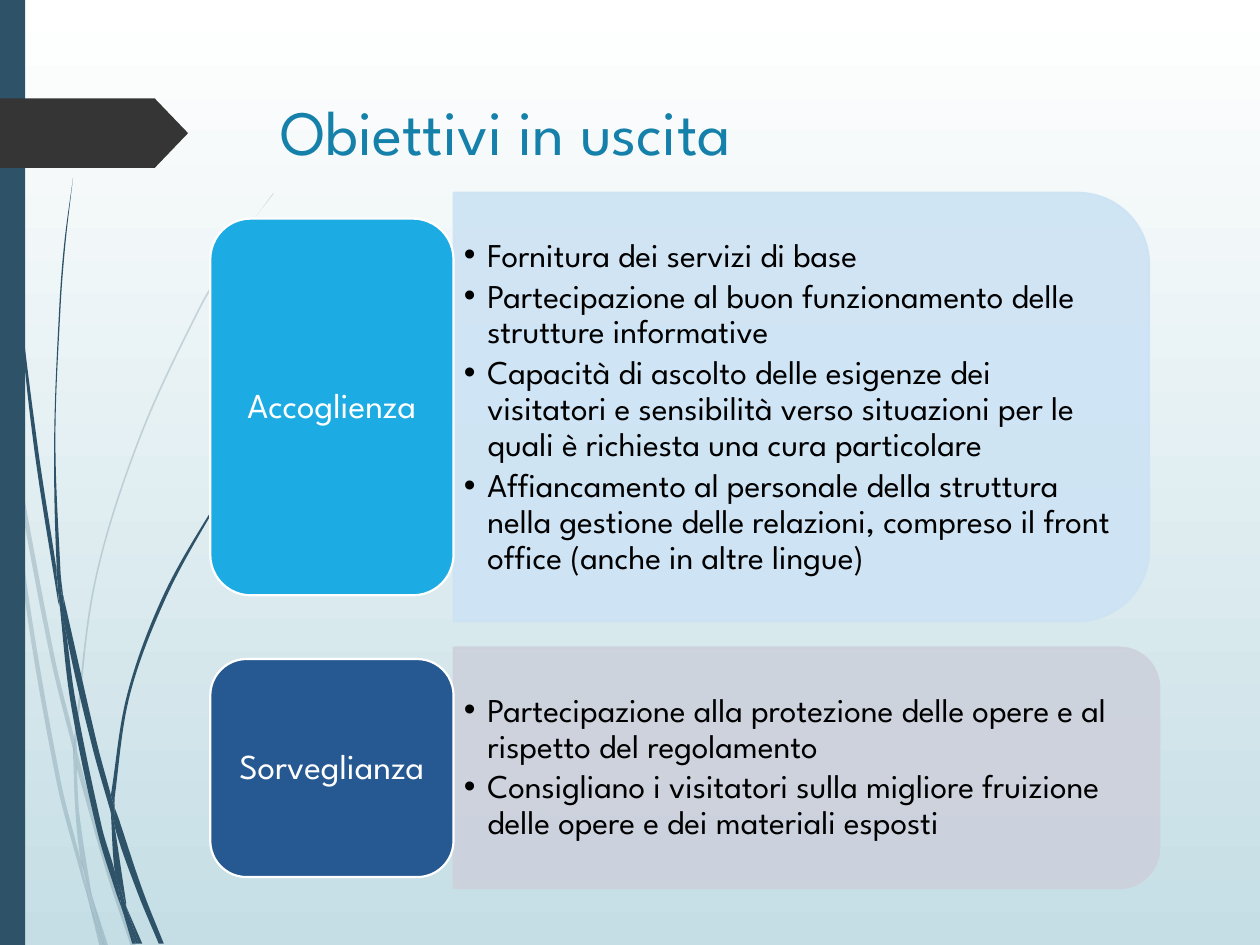
import math

import pptx
import pptx.util
import pptx.dml.color
import pptx.enum.shapes
import pptx.enum.text
import pptx.oxml
import pptx.oxml.ns

Pt = pptx.util.Pt
KIND = pptx.enum.shapes.MSO_SHAPE
ALIGN = pptx.enum.text.PP_ALIGN
ANCHOR = pptx.enum.text.MSO_ANCHOR
qn = pptx.oxml.ns.qn

FONT = "League Spartan"
HEX = {
    "white": "FFFFFF", "mist": "C5DEE5", "stem": "2E5369", "tag": "353535",
    "title": "1581AA", "text": "000000", "sky": "1CACE3", "navy": "265991",
    "pale": "CDE3F4", "grey": "CDD1DC",
}
TITLE = "Obiettivi in uscita"

# Each row: label, its colour, panel colour, tops and heights, panel width, items
ROWS = [
    {"label": "Accoglienza", "fill": "sky", "panel": "pale",
     "top": 124.9, "high": 215.3, "back": (110.2, 244.8), "wide": 397.4,
     "body": (122.4, 221, 385.2),
     "items": [
         "Fornitura dei servizi di base",
         "Partecipazione al buon funzionamento delle strutture informative",
         "Capacità di ascolto delle esigenze dei visitatori e sensibilità verso "
         "situazioni per le quali è richiesta una cura particolare",
         "Affiancamento al personale della struttura nella gestione delle "
         "relazioni, compreso il front office (anche in altre lingue)"]},
    {"label": "Sorveglianza", "fill": "navy", "panel": "grey",
     "top": 376.6, "high": 124.6, "back": (370, 137.5), "wide": 403.2,
     "body": (376.8, 123.8, 396.7),
     "items": [
         "Partecipazione alla protezione delle opere e al rispetto del regolamento",
         "Consigliano i visitatori sulla migliore fruizione delle opere e dei "
         "materiali esposti"]},
]
LEFT, SPLIT, BOX = 120.2, 259.2, 139

# Grass blades: the two edges of each piece, on a grid of 0.72 points
GRID = 0.72
FAINT = [
    ([(8, 350), (6, 322), (0, 282)], [(0, 299), (7, 344)]),
    ([(12, 376), (40, 522), (59, 599)], [(59, 586), (43, 520), (10, 345)]),
    ([(61, 610), (85, 694), (104, 751)],
     [(108, 751), (88, 692), (64, 607), (61, 596)]),
    ([(73, 711), (83, 751)], [(86, 751)]),
    ([(8, 350), (19, 470), (45, 621), (64, 693), (70, 714)],
     [(69, 707), (64, 683), (48, 619), (22, 469), (12, 376)]),
    ([(58, 599), (60, 646), (64, 683), (67, 692), (73, 711)],
     [(72, 706), (63, 646), (61, 610), (61, 608)]),
    ([(61, 596), (61, 584), (76, 462), (111, 349), (159, 245), (187, 198),
      (201, 175), (217, 154)],
     [(217, 153), (201, 175), (186, 197), (158, 244), (110, 348), (75, 461),
      (59, 584), (59, 586)]),
    ([(70, 714), (79, 751)], [(82, 751)]),
    ([(58, 599), (61, 608), (61, 610)], [(61, 596), (59, 586)]),
    ([(65, 683), (69, 707), (70, 714), (82, 751)],
     [(83, 751), (73, 711), (67, 692)]),
]
DARK = [
    ([(2, 0), (3, 48), (5, 110), (14, 233), (27, 355), (46, 477), (47, 481)],
     [(45, 457), (45, 453), (30, 355), (15, 232), (6, 109), (4, 48), (3, 0)]),
    ([(50, 472), (53, 505), (73, 592), (88, 645)],
     [(88, 633), (88, 631), (77, 590), (50, 472)]),
    ([(91, 641), (91, 656), (109, 708), (126, 749)],
     [(130, 749), (113, 706), (94, 649)]),
    ([(47, 477), (56, 557), (77, 659), (92, 708), (97, 722)],
     [(96, 717), (91, 691), (81, 657), (60, 556), (53, 505)]),
    ([(50, 472), (48, 453), (44, 349), (48, 245), (52, 193), (58, 141)],
     [(58, 141), (51, 193), (47, 245), (43, 349), (45, 449), (49, 472)]),
    ([(100, 719), (110, 749)], [(113, 749)]),
    ([(45, 449), (45, 453), (47, 477), (53, 505)], [(50, 472), (49, 472)]),
    ([(91, 641), (91, 633), (103, 552), (131, 476), (169, 406), (191, 374),
      (203, 359), (216, 344)],
     [(215, 344), (203, 358), (191, 373), (168, 405), (129, 474), (101, 551),
      (88, 631)]),
    ([(97, 722), (105, 749)], [(108, 749)]),
    ([(88, 645), (91, 691), (96, 706), (100, 719)],
     [(100, 716), (91, 656), (90, 651)]),
    ([(88, 631), (88, 645), (90, 651), (91, 656)], [(91, 641)]),
    ([(91, 691), (96, 717), (97, 722), (108, 749)],
     [(110, 749), (100, 719), (96, 706)]),
]


def rgb(name):
    return pptx.dml.color.RGBColor.from_string(HEX[name])


def node(tag, **attrs):
    part = pptx.oxml.parse_xml(
        f'<a:{tag} xmlns:a="http://schemas.openxmlformats.org/drawingml/2006/main"/>')
    for key, value in attrs.items():
        part.set(key, str(value))
    return part


def paint(shape, fill, line=None, alpha=100):
    shape.shadow.inherit = False
    shape.fill.solid()
    shape.fill.fore_color.rgb = rgb(fill)
    if line:
        shape.line.color.rgb = rgb(line)
        shape.line.width = Pt(1.25)
    else:
        shape.line.fill.background()
    if alpha < 100:
        for color in shape._element.spPr.iter(qn("a:srgbClr")):
            color.append(node("alpha", val=alpha * 1000))


def add(shapes, kind, box, *look):
    shape = shapes.add_shape(kind, *map(Pt, box))
    paint(shape, *look)
    return shape


def style(para, size, color):
    for run in para.runs:
        run.font.name = FONT
        run.font.size = Pt(size)
        run.font.color.rgb = rgb(color)


def frame(shape):
    text = shape.text_frame
    text.word_wrap = True
    text.vertical_anchor = ANCHOR.MIDDLE
    text.margin_left = text.margin_right = Pt(5.8)
    text.margin_top = text.margin_bottom = Pt(2.9)
    return text


def handle(spot, goal, back, ahead):
    """Control point at spot: a third of the way to goal, along back-ahead."""
    reach = math.dist(spot, goal) / 3 / (math.dist(back, ahead) or 1)
    return [round(s + (h - b) * reach) for s, b, h in zip(spot, back, ahead)]


def bend(path, edge, first):
    """Turn the straight steps along one edge into smooth curves."""
    steps = list(path)[first:first + len(edge)]
    dots = [tuple(int(step[0].get(k)) for k in "xy") for step in steps]
    dots = [dots[0]] + dots + [dots[-1]]
    for step, a, b, c, d in zip(steps[1:], dots, dots[1:], dots[2:], dots[3:]):
        cubic = node("cubicBezTo")
        for x, y in (handle(b, c, a, c), handle(c, b, d, b), c):
            cubic.append(node("pt", x=x, y=y))
        path.replace(step, cubic)


def blade(shapes, one, two, alpha):
    dots = [(Pt(x * GRID), Pt(y * GRID)) for x, y in one + two]
    pen = shapes.build_freeform(*dots[0])
    pen.add_line_segments(dots[1:], close=True)
    shape = pen.convert_to_shape()
    route = next(shape._element.iter(qn("a:path")))
    bend(route, one, 0)
    bend(route, two, len(one))
    paint(shape, "stem", None, alpha)


def bullet(para):
    props = para._p.get_or_add_pPr()
    props.set("marL", str(Pt(13.5)))
    props.set("indent", str(-Pt(13.5)))
    props.append(node("buFont", typeface="Arial"))
    props.append(node("buChar", char="•"))


def row(shapes, data):
    # Panel, turned so that its round corners face right
    top, high = data["back"]
    wide = data["wide"]
    box = (SPLIT + (wide - high) / 2, top + (high - wide) / 2, high, wide)
    panel = add(shapes, KIND.ROUND_2_SAME_RECTANGLE, box,
                data["panel"], data["panel"], 90)
    panel.rotation = 90
    # Bulleted text
    top, high, wide = data["body"]
    text = frame(shapes.add_textbox(*map(Pt, (SPLIT, top, wide, high))))
    for i, item in enumerate(data["items"]):
        para = text.add_paragraph() if i else text.paragraphs[0]
        para.text = item
        para.line_spacing = 0.9
        para.space_after = Pt(2.85)
        bullet(para)
        style(para, 19, "text")
    # Label
    label = add(shapes, KIND.ROUNDED_RECTANGLE,
                (LEFT, data["top"], BOX, data["high"]), data["fill"], "white")
    para = frame(label).paragraphs[0]
    para.text = data["label"]
    para.alignment = ALIGN.CENTER
    para.line_spacing = 0.9
    style(para, 20, "white")


def main():
    deck = pptx.Presentation()
    deck.slide_width, deck.slide_height = Pt(720), Pt(540)
    slide = deck.slides.add_slide(deck.slide_layouts[5])
    shapes = slide.shapes

    # Background
    back = slide.background.fill
    back.gradient()
    back.gradient_angle = 270
    for stop, name, place in zip(back.gradient_stops, ("white", "mist"), (0, 1)):
        stop.color.rgb = rgb(name)
        stop.position = place

    # Grass, side bar and tag
    for group, alpha in ((FAINT, 20), (DARK, 100)):
        for one, two in group:
            blade(shapes, one, two, alpha)
    add(shapes, KIND.RECTANGLE, (0, 0, 14.4, 540), "stem")
    tag = add(shapes, KIND.PENTAGON, (0, 56.2, 107.5, 39.8), "tag")
    tag.adjustments[0] = 0.48

    # Title
    title = shapes.title
    title.left, title.top, title.width, title.height = map(
        Pt, (153, 49, 519.1, 100.8))
    title.text_frame.text = TITLE
    title.text_frame.vertical_anchor = ANCHOR.TOP
    para = title.text_frame.paragraphs[0]
    para.alignment = ALIGN.LEFT
    style(para, 36, "title")

    # Rows
    for data in ROWS:
        row(shapes, data)
    deck.save("out.pptx")


if __name__ == "__main__":
    main()
